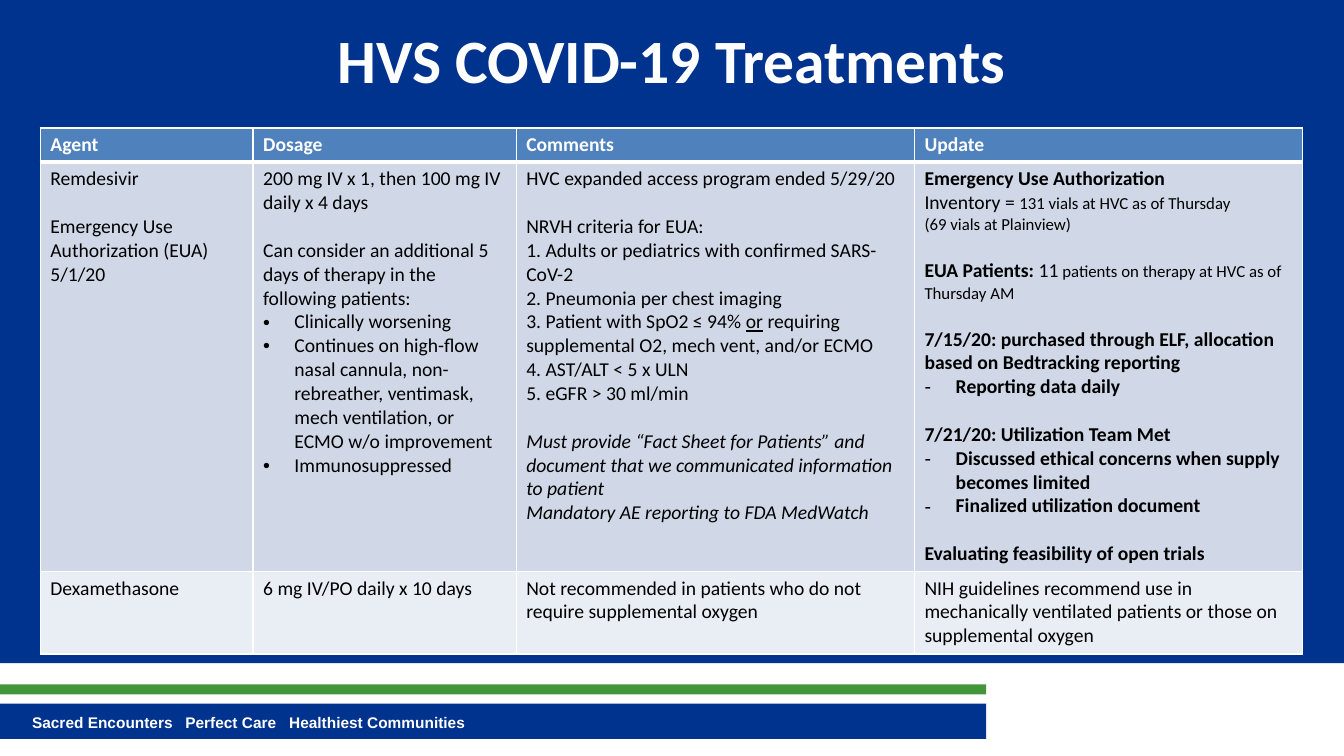
from dataclasses import dataclass

from lxml.etree import SubElement
from pptx import Presentation
from pptx.dml.color import RGBColor
from pptx.enum.shapes import MSO_SHAPE
from pptx.enum.text import MSO_ANCHOR, PP_ALIGN
from pptx.oxml.ns import qn
from pptx.util import Inches, Pt


@dataclass(frozen=True)
class Theme:
    navy: str = "00338E"
    green: str = "439539"
    white: str = "FFFFFF"
    black: str = "000000"
    header: str = "4F81BD"
    rows: tuple = ("D0D8E8", "E9EDF4")
    font: str = "Calibri"
    footer_font: str = "Arial"
    bullet_font: str = "Arial"
    title_size: int = 44
    body_size: int = 14
    small_size: int = 12
    footer_size: int = 11
    paragraph_gap: int = 17
    hanging_indent: float = 0.31
    thin: int = 1
    thick: int = 3


THEME = Theme()


@dataclass(frozen=True)
class Line:
    """One paragraph: (text, format) spans, an optional bullet and a gap above."""
    spans: tuple
    bullet: str = ""
    gap: bool = False


def line(text, bullet="", gap=False, **style):
    return Line(((text, style),), bullet, gap)


def write(para, text, size=THEME.body_size, color=THEME.black, font=THEME.font,
          bold=False, italic=False, underline=False):
    span = para.add_run()
    span.text = text
    span.font.size = Pt(size)
    span.font.name = font
    span.font.color.rgb = RGBColor.from_string(color)
    span.font.bold = bold
    span.font.italic = italic
    span.font.underline = underline


class SlideBuilder:
    """Places elements by percentages of the slide's width and height."""

    def __init__(self, deck, theme):
        self.deck = deck
        self.theme = theme
        self.page = deck.slides.add_slide(deck.slide_layouts[5])

    def across(self, share):
        return round(self.deck.slide_width * share / 100)

    def down(self, share):
        return round(self.deck.slide_height * share / 100)

    def area(self, left, top, width, height):
        return self.across(left), self.down(top), self.across(width), self.down(height)

    def band(self, color, *place):
        box = self.page.shapes.add_shape(MSO_SHAPE.RECTANGLE, *self.area(*place))
        box.shadow.inherit = False
        box.fill.solid()
        box.fill.fore_color.rgb = RGBColor.from_string(color)
        box.line.fill.background()

    def title(self, text, *place):
        box = self.page.shapes.title
        box.left, box.top, box.width, box.height = self.area(*place)
        box.element.getparent().append(box.element)  # bring in front of the bands
        box.text_frame.vertical_anchor = MSO_ANCHOR.MIDDLE
        para = box.text_frame.paragraphs[0]
        para.alignment = PP_ALIGN.CENTER
        write(para, text, size=self.theme.title_size, color=self.theme.white, bold=True)

    def footer(self, phrases, tab_stops, *place):
        box = self.page.shapes.add_textbox(*self.area(*place))
        box.text_frame.word_wrap = True
        para = box.text_frame.paragraphs[0]
        tabs = SubElement(para._p.get_or_add_pPr(), qn("a:tabLst"))
        for stop in tab_stops:
            SubElement(tabs, qn("a:tab"), pos=str(self.across(stop)), algn="l")
        write(para, "\t".join(phrases), size=self.theme.footer_size,
              color=self.theme.white, font=self.theme.footer_font, bold=True)

    def table(self, cells, widths, heights, left, top):
        place = self.area(left, top, sum(widths), sum(heights))
        table = self.page.shapes.add_table(len(heights), len(widths), *place).table
        for column, width in zip(table.columns, widths):
            column.width = self.across(width)
        for row, height in zip(table.rows, heights):
            row.height = self.down(height)
        fills = (self.theme.header, *self.theme.rows)
        for row, (contents, fill) in enumerate(zip(cells, fills)):
            for column, lines in enumerate(contents):
                cell = table.cell(row, column)
                self.borders(cell, row)
                cell.fill.solid()
                cell.fill.fore_color.rgb = RGBColor.from_string(fill)
                self.fill_cell(cell.text_frame, lines)

    def borders(self, cell, row):
        """Draw white borders, with a thick rule below the header row."""
        thin, thick = self.theme.thin, self.theme.thick
        widths = {"lnL": thin, "lnR": thin,
                  "lnT": thick if row == 1 else thin,
                  "lnB": thick if row == 0 else thin}
        properties = cell._tc.get_or_add_tcPr()
        for side, width in widths.items():
            edge = SubElement(properties, qn(f"a:{side}"), w=str(Pt(width)))
            paint = SubElement(edge, qn("a:solidFill"))
            SubElement(paint, qn("a:srgbClr"), val=self.theme.white)

    def fill_cell(self, frame, lines):
        for index, item in enumerate(lines):
            para = frame.add_paragraph() if index else frame.paragraphs[0]
            if item.bullet:
                indent = Inches(self.theme.hanging_indent)
                properties = para._p.get_or_add_pPr()
                properties.set("marL", str(indent))
                properties.set("indent", str(-indent))
                SubElement(properties, qn("a:buFont"), typeface=self.theme.bullet_font)
                SubElement(properties, qn("a:buChar"), char=item.bullet)
            if item.gap:
                para.space_before = Pt(self.theme.paragraph_gap)
            for text, style in item.spans:
                write(para, text, **style)


SMALL = {"size": THEME.small_size}
BOLD = {"bold": True}

HEADER = [[line(name, color=THEME.white, bold=True)]
          for name in ("Agent", "Dosage", "Comments", "Update")]

REMDESIVIR = [
    [line("Remdesivir"),
     line("Emergency Use Authorization (EUA) 5/1/20", gap=True)],
    [line("200 mg IV x 1, then 100 mg IV daily x 4 days"),
     line("Can consider an additional 5 days of therapy in the following patients:", gap=True),
     line("Clinically worsening", "•"),
     line("Continues on high-flow nasal cannula, non-rebreather, ventimask, "
          "mech ventilation, or ECMO w/o improvement", "•"),
     line("Immunosuppressed", "•")],
    [line("HVC expanded access program ended 5/29/20"),
     line("NRVH criteria for EUA:", gap=True),
     line("1. Adults or pediatrics with confirmed SARS-CoV-2"),
     line("2. Pneumonia per chest imaging"),
     Line((("3. Patient with SpO2 ≤ 94% ", {}), ("or", {"underline": True}),
           (" requiring supplemental O2, mech vent, and/or ECMO", {}))),
     line("4. AST/ALT < 5 x ULN"),
     line("5. eGFR > 30 ml/min"),
     line("Must provide “Fact Sheet for Patients” and document that we "
          "communicated information to patient", gap=True, italic=True),
     line("Mandatory AE reporting to FDA MedWatch", italic=True)],
    [line("Emergency Use Authorization", **BOLD),
     Line((("Inventory = ", {}), ("131 vials at HVC as of Thursday", SMALL))),
     line("(69 vials at Plainview)", **SMALL),
     Line((("EUA Patients: ", BOLD), ("11", {}),
           (" patients on therapy at HVC as of Thursday AM", SMALL)), gap=True),
     line("7/15/20: purchased through ELF, allocation based on Bedtracking reporting",
          gap=True, **BOLD),
     line("Reporting data daily", "-", **BOLD),
     line("7/21/20: Utilization Team Met", gap=True, **BOLD),
     line("Discussed ethical concerns when supply becomes limited", "-", **BOLD),
     line("Finalized utilization document", "-", **BOLD),
     line("Evaluating feasibility of open trials", gap=True, **BOLD)],
]

DEXAMETHASONE = [[line(text)] for text in (
    "Dexamethasone",
    "6 mg IV/PO daily x 10 days",
    "Not recommended in patients who do not require supplemental oxygen",
    "NIH guidelines recommend use in mechanically ventilated patients "
    "or those on supplemental oxygen")]


def main():
    deck = Presentation()
    deck.slide_width, deck.slide_height = Inches(13.33), Inches(7.5)
    slide = SlideBuilder(deck, THEME)
    slide.band(THEME.navy, 0, 0, 100, 87.73)
    slide.band(THEME.navy, 0, 93.07, 73.37, 4.67)
    slide.band(THEME.green, 0, 90.53, 73.37, 1.33)
    slide.footer(("Sacred Encounters", "Perfect Care", "Healthiest Communities"),
                 (11.4, 19.13), 1.65, 93.73, 62.49, 3.87)
    slide.title("HVS COVID-19 Treatments", 5, 1.6, 90, 12.27)
    slide.table((HEADER, REMDESIVIR, DEXAMETHASONE),
                widths=(15.83, 19.58, 29.63, 28.88), heights=(4.53, 54.13, 10.93),
                left=3, top=16.93)
    deck.save("out.pptx")


if __name__ == "__main__":
    main()
